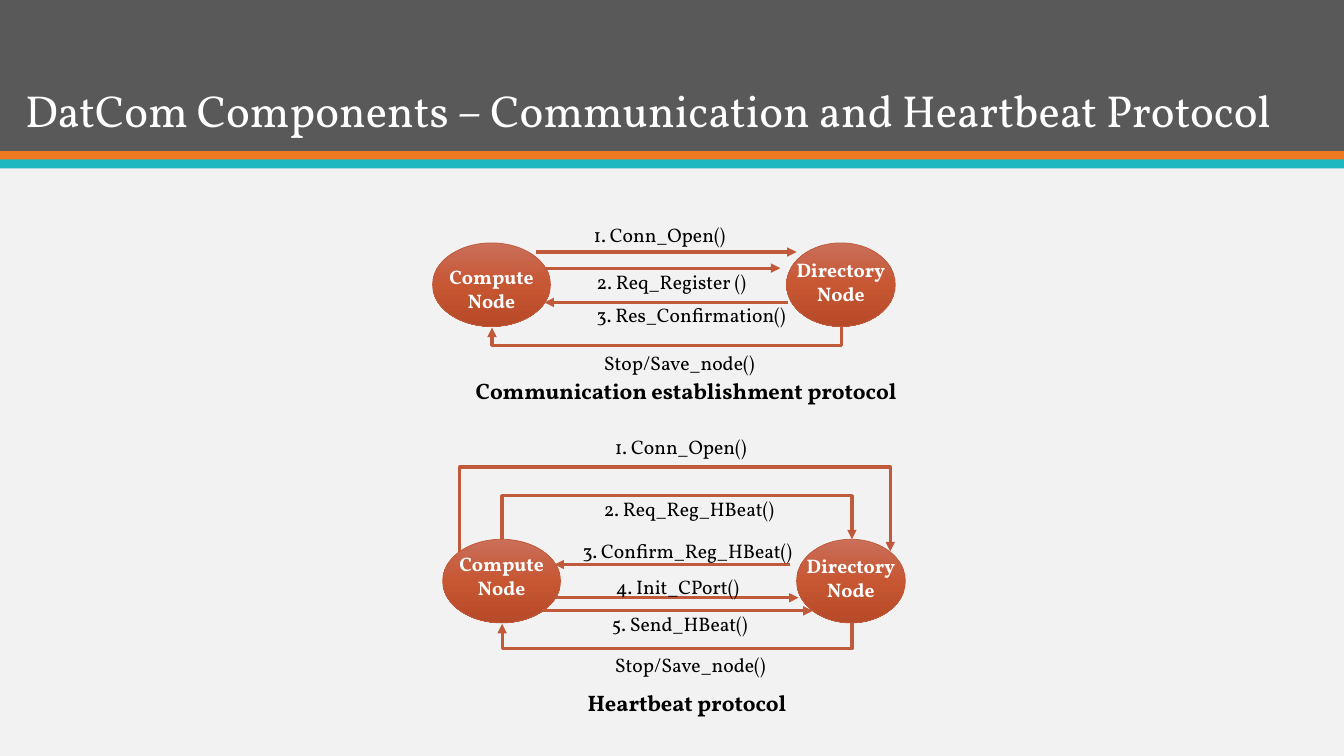
from copy import deepcopy

from lxml import etree
from pptx import Presentation
from pptx.dml.color import RGBColor
from pptx.enum import shapes, text
from pptx.oxml.ns import qn
from pptx.util import Inches, Pt

COLORS = {
    "background": "F2F2F2", "banner": "595959", "orange": "EF7920", "teal": "1EB8C1",
    "white": "FFFFFF", "black": "000000", "arrow": "C05A3A",
    "node_top": "CA6F5A", "node_middle": "C75633", "node_bottom": "B74A28",
}


class ProtocolSlide:
    FONT = "Vollkorn"
    LABEL_SIZE = 14
    CAPTION_SIZE = 16
    ARROW_WIDTH = 2.25
    ELBOW_RISE = 0.01

    def __init__(self, presentation):
        self.slide = presentation.slides.add_slide(presentation.slide_layouts[6])
        background = self.slide.background.fill
        background.solid()
        background.fore_color.rgb = self.color("background")

    @staticmethod
    def color(name):
        return RGBColor.from_string(COLORS[name])

    def band(self, top, height, color):
        band = self.slide.shapes.add_shape(
            shapes.MSO_SHAPE.RECTANGLE, 0, Inches(top), Inches(13.33), Inches(height))
        band.shadow.inherit = False
        band.fill.solid()
        band.fill.fore_color.rgb = self.color(color)
        band.line.fill.background()

    def label(self, words, left, top, width, height, size=LABEL_SIZE, color="black",
              bold=False, wrap=False, align=None, anchor=None, spacing=None):
        box = self.slide.shapes.add_textbox(
            Inches(left), Inches(top), Inches(width), Inches(height))
        frame = box.text_frame
        frame.text = words
        frame.word_wrap = wrap
        frame.vertical_anchor = anchor
        for paragraph in frame.paragraphs:
            paragraph.alignment = align
            paragraph.line_spacing = spacing
            for run in paragraph.runs:
                run.font.name = self.FONT
                run.font.size = Pt(size)
                run.font.bold = bold
                run.font.color.rgb = self.color(color)

    def title(self, words):
        self.label(words, 0.15, 0.28, 13.03, 1.13, size=32, color="white", wrap=True,
                   anchor=text.MSO_ANCHOR.BOTTOM, spacing=0.9)

    def caption(self, words, left, top, width):
        self.label(words, left, top, width, 0.37, size=self.CAPTION_SIZE, bold=True)

    def message(self, words, left, top, width):
        self.label(words, left, top, width, 0.34)

    def node(self, words, left, top, width, label_top):
        oval = self.slide.shapes.add_shape(
            shapes.MSO_SHAPE.OVAL, Inches(left), Inches(top), Inches(width), Inches(0.83))
        oval.shadow.inherit = False
        oval.line.color.rgb = self.color("arrow")
        oval.line.width = Pt(0.5)
        oval.fill.gradient()
        oval.fill.gradient_angle = 270
        stop_list = oval._element.spPr.find(".//" + qn("a:gsLst"))
        stop_list.append(deepcopy(stop_list[-1]))
        shades = ("node_top", "node_middle", "node_bottom")
        for index, (stop, shade) in enumerate(zip(oval.fill.gradient_stops, shades)):
            stop.position = index / 2
            stop.color.rgb = self.color(shade)
        label_width = 2.25
        self.label(words, left + (width - label_width) / 2, label_top, label_width, 0.57,
                   color="white", bold=True, wrap=True, align=text.PP_ALIGN.CENTER)

    def connector(self, kind, x1, y1, x2, y2):
        connector = self.slide.shapes.add_connector(
            kind, Inches(x1), Inches(y1), Inches(x2), Inches(y2))
        connector.line.color.rgb = self.color("arrow")
        connector.line.width = Pt(self.ARROW_WIDTH)
        properties = connector._element.spPr
        line = properties.find(qn("a:ln"))
        etree.SubElement(line, qn("a:tailEnd"), type="triangle")
        etree.SubElement(properties, qn("a:effectLst"))
        return connector

    def arrow(self, start, end, y):
        self.connector(shapes.MSO_CONNECTOR.STRAIGHT, start, y, end, y)

    def elbow(self, start, end, y, turn):
        """Leave at y, run level at turn, come back to y: rightward above, leftward below."""
        span, rise = abs(end - start), self.ELBOW_RISE
        left = (start + end - rise) / 2
        top = y + (rise - span) / 2
        corners = (left, top), (left + rise, top + span)
        first, last = corners if turn > y else corners[::-1]
        connector = self.connector(shapes.MSO_CONNECTOR.ELBOW, *first, *last)
        properties = connector._element.spPr
        properties.find(qn("a:xfrm")).set("rot", str(90 * 60000))
        geometry = properties.find(qn("a:prstGeom"))
        adjustments = geometry.find(qn("a:avLst"))
        if adjustments is None:
            adjustments = etree.SubElement(geometry, qn("a:avLst"))
        depth = round(abs(turn - y) / rise * 100000)
        etree.SubElement(adjustments, qn("a:gd"), name="adj1", fmla=f"val {depth}")


def main():
    presentation = Presentation()
    presentation.slide_width = Inches(13.33)
    presentation.slide_height = Inches(7.5)
    page = ProtocolSlide(presentation)

    # Banner and title
    page.band(0, 1.5, "banner")
    page.band(1.5, 0.09, "orange")
    page.band(1.58, 0.09, "teal")
    page.title("DatCom Components – Communication and Heartbeat Protocol")

    # Nodes of both protocols
    page.node("Compute\nNode", 4.29, 2.41, 1.17, label_top=2.58)
    page.node("Directory\nNode", 7.8, 2.41, 1.08, label_top=2.51)
    page.node("Compute\nNode", 4.39, 5.35, 1.17, label_top=5.43)
    page.node("Directory\nNode", 7.9, 5.35, 1.08, label_top=5.45)

    # Straight arrows: start, end, height
    for start, end, y in (
        (5.32, 7.9, 2.5), (5.4, 7.74, 2.66), (7.82, 5.4, 3),
        (7.84, 5.5, 5.6), (5.5, 7.92, 5.93), (5.38, 8.06, 6.06),
    ):
        page.arrow(start, end, y)

    # Bent arrows: start, end, height of the ends, height of the level part
    for start, end, y, turn in (
        (8.35, 4.88, 3.24, 3.43),
        (4.56, 8.83, 5.47, 4.61), (4.98, 8.45, 5.35, 4.9), (8.45, 4.98, 6.18, 6.44),
    ):
        page.elbow(start, end, y, turn)

    # Messages: words, left, top, width
    for words, left, top, width in (
        ("1. Conn_Open()", 5.79, 2.16, 1.58),
        ("2. Req_Register ()", 5.82, 2.63, 1.72),
        ("3. Res_Confirmation()", 5.82, 2.96, 2.11),
        ("Stop/Save_node()", 5.89, 3.43, 1.78),
        ("1. Conn_Open()", 6, 4.27, 1.58),
        ("2. Req_Reg_HBeat()", 5.89, 4.88, 1.94),
        ("3. Confirm_Reg_HBeat()", 5.68, 5.3, 2.33),
        ("4. Init_CPort()", 6.01, 5.65, 1.44),
        ("5. Send_HBeat()", 5.97, 6.02, 1.6),
        ("Stop/Save_node()", 6, 6.43, 1.78),
    ):
        page.message(words, left, top, width)

    # Captions
    page.caption("Communication establishment protocol", 4.62, 3.69, 4.43)
    page.caption("Heartbeat protocol", 5.73, 6.79, 2.2)

    presentation.save("out.pptx")


if __name__ == "__main__":
    main()
